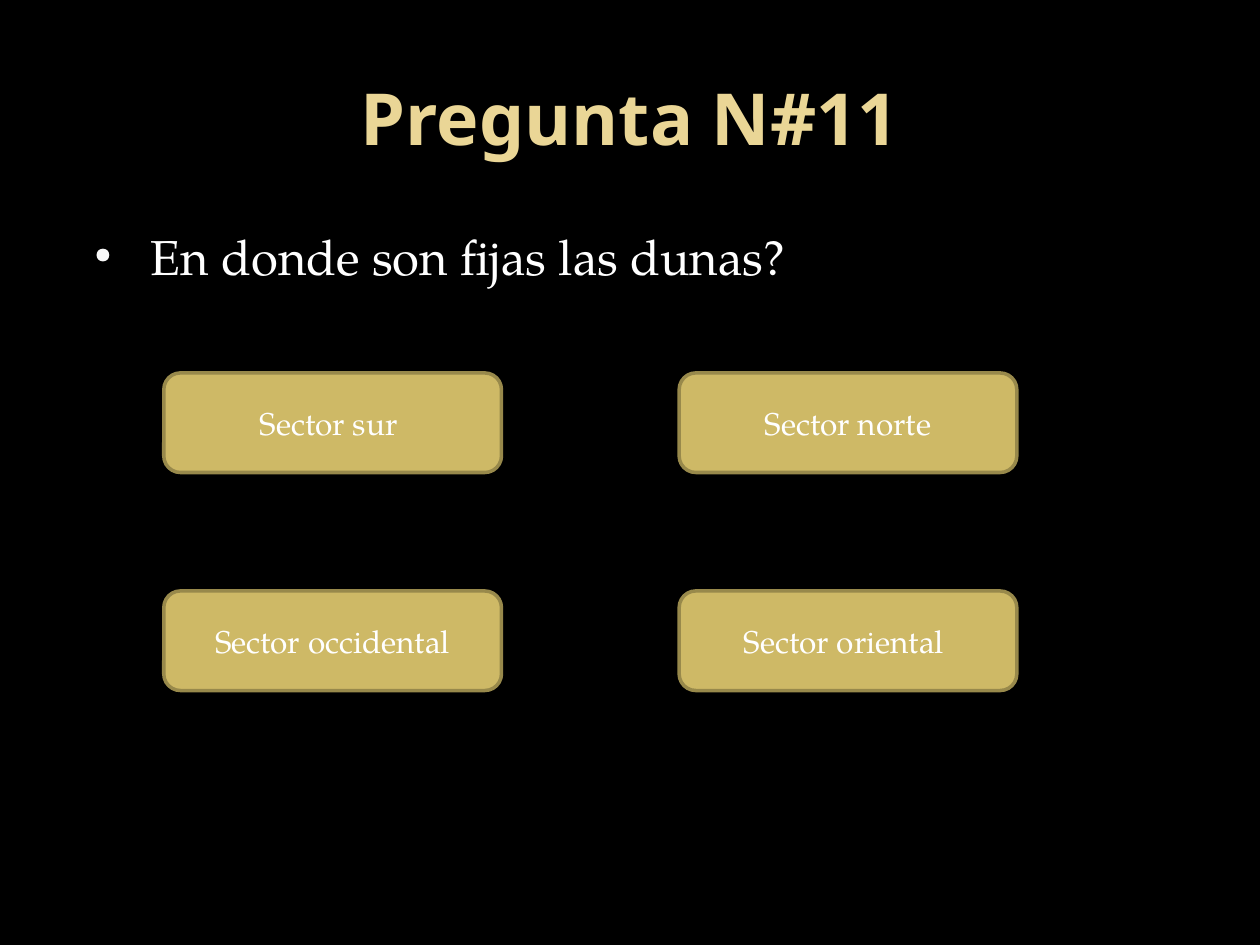
from lxml.etree import SubElement
from pptx import Presentation
from pptx.dml.color import RGBColor
from pptx.enum.shapes import MSO_SHAPE as Shape
from pptx.enum.text import MSO_ANCHOR as Anchor, MSO_AUTO_SIZE as Fit, PP_ALIGN as Align
from pptx.oxml.ns import qn
from pptx.util import Inches, Pt

# Content
TITLE = "Pregunta N#11"
ASK = "En donde son fijas las dunas?"
ANSWERS = [
    ["Sector sur ", "Sector norte"],
    ["Sector occidental", "Sector oriental "],
]

# Look
HEAD, BODY = "Noto Sans", "TeX Gyre Pagella"
BLACK, WHITE, DOT = "000000", "FFFFFF", "F9F9F9"
SAND, GOLD, EDGE = "EAD696", "CEB966", "98894B"

# Grid in inches
WIDE, HIGH = 10, 7.5
EDGE_X, SPAN = 0.05 * WIDE, 0.9 * WIDE
LEFT, TOP = 1.3, 2.96
STEP_X, STEP_Y = 4.09, 1.73
BOX_W, BOX_H = 2.68, 0.79


def color(code):
    return RGBColor.from_string(code)


def paint(fill, code):
    fill.solid()
    fill.fore_color.rgb = color(code)


def write(shape, text, font, size, code, align, anchor, bold=False):
    frame = shape.text_frame
    frame.text = text
    frame.word_wrap = True
    frame.auto_size = Fit.NONE
    frame.vertical_anchor = anchor
    para = frame.paragraphs[0]
    para.alignment = align
    para.font.name, para.font.size, para.font.bold = font, Pt(size), bold
    para.font.color.rgb = color(code)
    return para


def bullet(para, mark, code, share, indent, hang):
    props = para._p.get_or_add_pPr()
    props.set("marL", str(Inches(indent)))
    props.set("indent", str(-Inches(hang)))
    parts = [SubElement(props, qn(tag)) for tag in
             ("a:buClr", "a:buSzPct", "a:buFont", "a:buChar")]
    # Bullet settings come before the default run properties
    run = props.find(qn("a:defRPr"))
    if run is not None:
        props.append(run)
    SubElement(parts[0], qn("a:srgbClr")).set("val", code)
    parts[1].set("val", str(share * 1000))
    parts[2].set("typeface", BODY)
    parts[3].set("char", mark)


def main():
    deck = Presentation()
    deck.slide_width, deck.slide_height = Inches(WIDE), Inches(HIGH)
    slide = deck.slides.add_slide(deck.slide_layouts[5])
    paint(slide.background.fill, BLACK)

    # Title
    title = slide.shapes.title
    title.left, title.top = Inches(EDGE_X), Inches(0.04 * HIGH)
    title.width, title.height = Inches(SPAN), Inches(1.25)
    write(title, TITLE, HEAD, 41, SAND, Align.CENTER, Anchor.MIDDLE, True)

    # Question
    ask = slide.shapes.add_textbox(
        Inches(EDGE_X), Inches(1.75), Inches(SPAN), Inches(5.15))
    para = write(ask, ASK, BODY, 28, WHITE, Align.LEFT, Anchor.TOP)
    bullet(para, "•", DOT, 65, 0.6, 0.45)

    # Answer buttons
    for row, line in enumerate(ANSWERS):
        for col, text in enumerate(line):
            box = slide.shapes.add_shape(
                Shape.ROUNDED_RECTANGLE,
                Inches(LEFT + col * STEP_X), Inches(TOP + row * STEP_Y),
                Inches(BOX_W), Inches(BOX_H))
            box.shadow.inherit = False
            paint(box.fill, GOLD)
            paint(box.line.fill, EDGE)
            box.line.width = Pt(2)
            write(box, text, BODY, 18, WHITE, Align.CENTER, Anchor.MIDDLE)

    deck.save("out.pptx")


if __name__ == "__main__":
    main()
